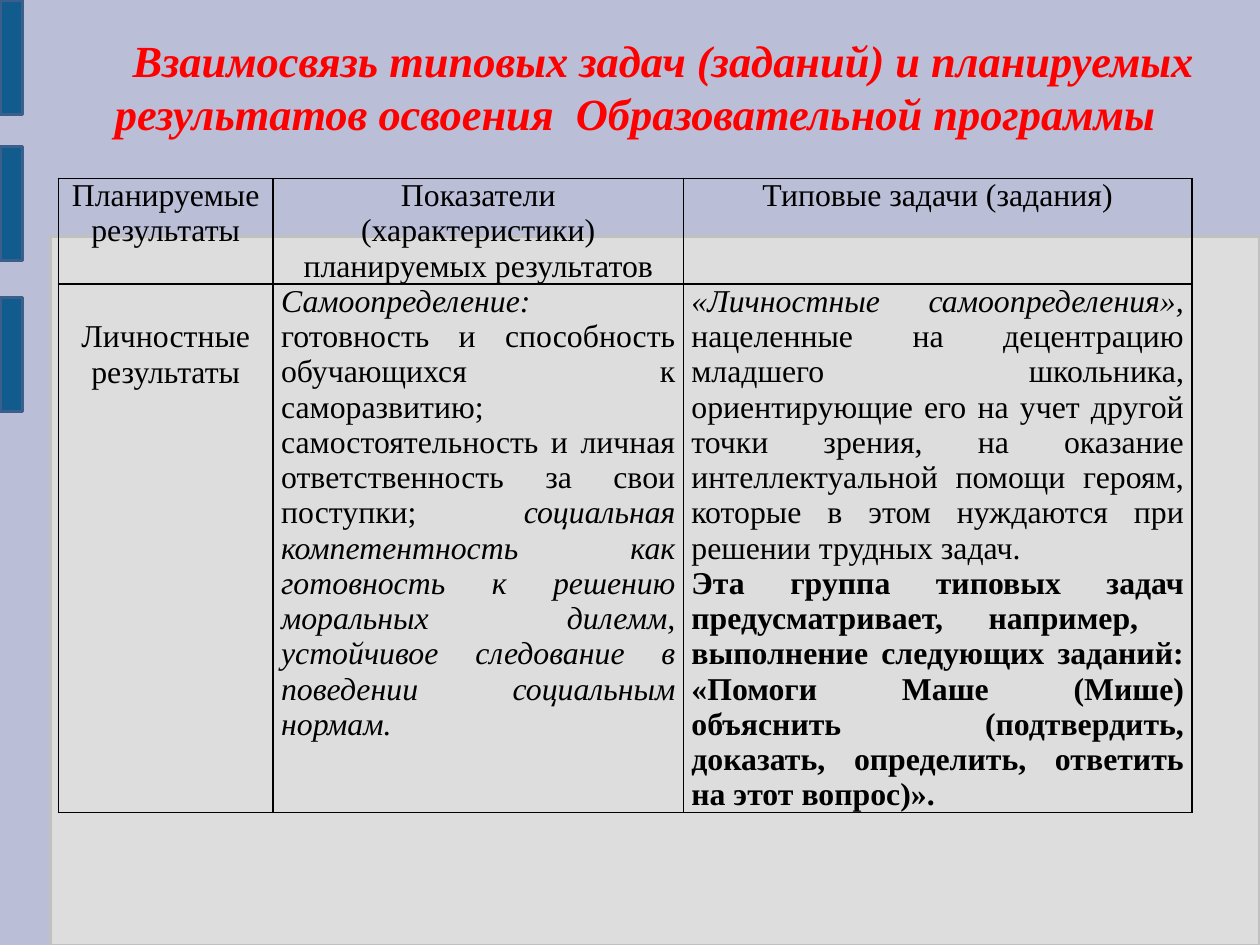
"""Builds a slide linking planned learning results to typical tasks."""
from dataclasses import dataclass

from lxml import etree
from pptx import Presentation
from pptx import util as u
from pptx.dml import color
from pptx.enum import shapes, text
from pptx.oxml import ns

FONT = "Times New Roman"
POINTS_PER_INCH = 72
SLIDE_POINTS = (793.75, 595.25)
COLORS = {
    "background": "BABED6", "panel": "DDDDDD", "panel_line": "C0C0C0",
    "bar": "125C8D", "bar_line": "3A5F8C", "title": "FF0000", "ink": "000000",
}
CENTER, JUSTIFY = text.PP_ALIGN.CENTER, text.PP_ALIGN.JUSTIFY


@dataclass(frozen=True)
class Box:
    left: float
    top: float
    width: float
    height: float
    fill: str
    line: str


@dataclass(frozen=True)
class Run:
    text: str
    bold: bool = False
    italic: bool = False
    size: float = 20
    color: str = "ink"


@dataclass(frozen=True)
class CellContent:
    paragraphs: tuple[tuple[Run, ...], ...]
    align: text.PP_ALIGN = CENTER
    margin_top: float = 0


BOXES = [Box(0.44, 2.07, 10.58, 6.2, "panel", "panel_line")] + [
    Box(0, top, 0.2, 1, "bar", "bar_line") for top in (0, 1.28, 2.6)
]
TITLE = Run(
    "Взаимосвязь типовых задач (заданий) и планируемых результатов освоения  "
    "Образовательной программы", True, True, 28, "title")
COLUMN_WIDTHS = (1.88, 3.59, 4.45)
ROW_HEIGHTS = (0.92, 4.62)
HEADERS = ("Планируемые результаты",
           "Показатели (характеристики) планируемых результатов",
           "Типовые задачи (задания)")
INDICATORS = (
    Run("Самоопределение: ", italic=True),
    Run("готовность и способность обучающихся к саморазвитию; "
        "самостоятельность и личная ответственность за свои поступки; "),
    Run("социальная компетентность как готовность к решению моральных дилемм, "
        "устойчивое следование в поведении социальным нормам.", italic=True),
)
TASKS = (
    Run("«Личностные самоопределения», ", italic=True),
    Run("нацеленные на децентрацию младшего школьника, ориентирующие его на "
        "учет другой точки зрения, на оказание интеллектуальной помощи героям, "
        "которые в этом нуждаются при решении трудных задач."),
)
EXAMPLE = (
    Run("Эта группа типовых задач предусматривает, например,  выполнение "
        "следующих заданий: «Помоги Маше (Мише) объяснить (подтвердить, "
        "доказать, определить, ответить на этот вопрос)».", bold=True),
)
ROWS = (
    tuple(CellContent(((Run(header),),)) for header in HEADERS),
    (CellContent(((Run("Личностные результаты"),),), margin_top=0.31),
     CellContent((INDICATORS,), JUSTIFY),
     CellContent((TASKS, EXAMPLE), JUSTIFY)),
)


def rgb(name: str) -> color.RGBColor:
    return color.RGBColor.from_string(COLORS[name])


def add_run(paragraph, content: Run) -> None:
    run = paragraph.add_run()
    run.text = content.text
    run.font.name = FONT
    run.font.size = u.Pt(content.size)
    run.font.bold = content.bold
    run.font.italic = content.italic
    run.font.color.rgb = rgb(content.color)


def add_box(slide, box: Box) -> None:
    shape = slide.shapes.add_shape(
        shapes.MSO_SHAPE.RECTANGLE, u.Inches(box.left), u.Inches(box.top),
        u.Inches(box.width), u.Inches(box.height))
    shape.shadow.inherit = False
    shape.fill.solid()
    shape.fill.fore_color.rgb = rgb(box.fill)
    shape.line.color.rgb = rgb(box.line)
    shape.line.width = u.Pt(2)


def add_title(slide) -> None:
    shape = slide.shapes.add_textbox(
        u.Inches(0.36), u.Inches(0.23), u.Inches(10.39), u.Inches(1.05))
    frame = shape.text_frame
    frame.word_wrap = True
    frame.vertical_anchor = text.MSO_ANCHOR.MIDDLE
    paragraph = frame.paragraphs[0]
    paragraph.alignment = CENTER
    paragraph._p.get_or_add_pPr().set("indent", str(u.Inches(0.49)))
    add_run(paragraph, TITLE)


def add_borders(cell) -> None:
    properties = cell._tc.get_or_add_tcPr()
    for side in ("L", "R", "T", "B"):
        line = etree.SubElement(properties, ns.qn(f"a:ln{side}"), w=str(u.Pt(1)))
        fill = etree.SubElement(line, ns.qn("a:solidFill"))
        etree.SubElement(fill, ns.qn("a:srgbClr"), val=COLORS["ink"])


def fill_cell(cell, content: CellContent) -> None:
    cell.margin_left = cell.margin_right = u.Inches(0.07)
    cell.margin_top = u.Inches(content.margin_top)
    cell.margin_bottom = 0
    add_borders(cell)
    cell.fill.background()
    frame = cell.text_frame
    for index, runs in enumerate(content.paragraphs):
        paragraph = frame.add_paragraph() if index else frame.paragraphs[0]
        paragraph.alignment = content.align
        for run in runs:
            add_run(paragraph, run)


def add_results_table(slide) -> None:
    table = slide.shapes.add_table(
        len(ROWS), len(COLUMN_WIDTHS), u.Inches(0.51), u.Inches(1.56),
        u.Inches(sum(COLUMN_WIDTHS)), u.Inches(sum(ROW_HEIGHTS))).table
    table.first_row = table.horz_banding = False
    for column, width in zip(table.columns, COLUMN_WIDTHS):
        column.width = u.Inches(width)
    for row, height, contents in zip(table.rows, ROW_HEIGHTS, ROWS):
        row.height = u.Inches(height)
        for cell, content in zip(row.cells, contents):
            fill_cell(cell, content)


def main() -> None:
    presentation = Presentation()
    presentation.slide_width, presentation.slide_height = (
        u.Inches(points / POINTS_PER_INCH) for points in SLIDE_POINTS)
    slide = presentation.slides.add_slide(presentation.slide_layouts[6])
    slide.background.fill.solid()
    slide.background.fill.fore_color.rgb = rgb("background")
    for box in BOXES:
        add_box(slide, box)
    add_results_table(slide)
    add_title(slide)
    presentation.save("out.pptx")


if __name__ == "__main__":
    main()
